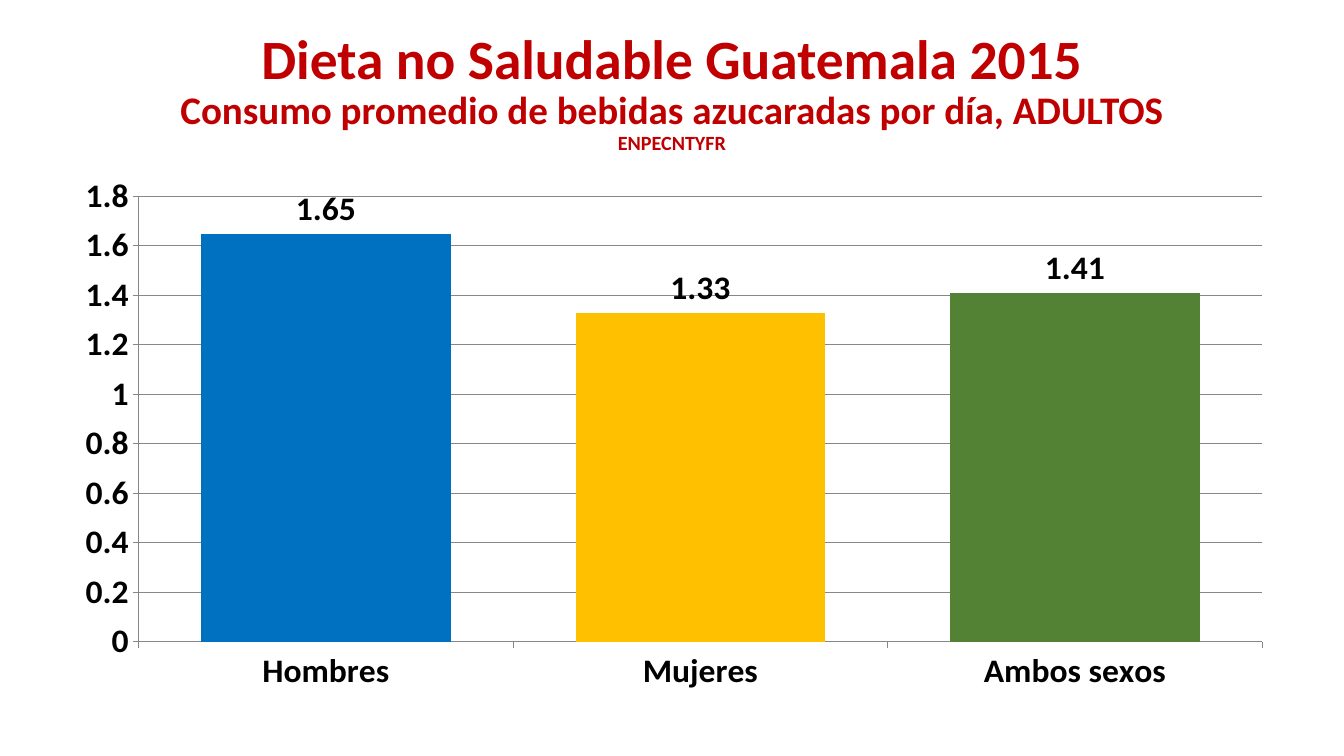
"""Build a slide charting average daily sugary drinks among Guatemalan adults."""
from lxml.etree import SubElement
from pptx import Presentation
from pptx.chart.data import CategoryChartData
from pptx.dml.color import RGBColor
from pptx.enum.chart import XL_CHART_TYPE, XL_LABEL_POSITION, XL_TICK_MARK
from pptx.enum.text import MSO_ANCHOR, MSO_AUTO_SIZE, PP_ALIGN
from pptx.oxml.ns import qn
from pptx.util import Pt

COLORS = {
    "title": "C00000",
    "text": "000000",
    "axis": "878787",
    "series": "4472C4",
    "men": "0070C0",
    "women": "FFC000",
    "both": "548235",
}
FONT = "Calibri"
SLIDE_SIZE = (960, 540)
TITLE_BOX = (66, 28.8, 828, 104.4)
CHART_BOX = (48, 126, 864, 368)
PLOT_AREA = {"x": 0.059, "y": 0.031, "w": 0.929, "h": 0.888}
TITLE_LINES = [
    ("Dieta no Saludable Guatemala 2015", 39.6),
    ("Consumo promedio de bebidas azucaradas por día, ADULTOS", 27.9),
    ("ENPECNTYFR", 14.4),
]
BARS = [("Hombres", 1.65, "men"), ("Mujeres", 1.33, "women"), ("Ambos sexos", 1.41, "both")]
TITLE_FRAME = {
    "auto_size": MSO_AUTO_SIZE.NONE,
    "word_wrap": True,
    "vertical_anchor": MSO_ANCHOR.MIDDLE,
    "margin_top": Pt(3.6),
    "margin_bottom": Pt(32.6),
}
CHART_FONT = {"name": FONT, "size": Pt(24), "bold": True}
VALUE_SCALE = {"minimum_scale": 0, "maximum_scale": 1.8, "major_unit": 0.2}
LABELS = {"show_value": True, "position": XL_LABEL_POSITION.OUTSIDE_END}


def apply(target, values):
    for name, value in values.items():
        setattr(target, name, value)


def color(name):
    return RGBColor.from_string(COLORS[name])


def format_font(font, values, color_name):
    apply(font, values)
    font.color.rgb = color(color_name)


def format_line(line):
    line.color.rgb = color("axis")
    line.width = Pt(0.75)


def fill_solid(fill, color_name):
    fill.solid()
    fill.fore_color.rgb = color(color_name)


def write_title(slide):
    title = slide.shapes.title
    apply(title, dict(zip(("left", "top", "width", "height"), map(Pt, TITLE_BOX))))
    apply(title.text_frame, TITLE_FRAME)
    paragraph = title.text_frame.paragraphs[0]
    apply(paragraph, {"alignment": PP_ALIGN.CENTER, "line_spacing": 0.9, "space_before": Pt(0)})
    for index, (text, size) in enumerate(TITLE_LINES):
        if index:
            paragraph.add_line_break()
        run = paragraph.add_run()
        run.text = text
        format_font(run.font, {"name": FONT, "size": Pt(size), "bold": True}, "title")


def place_plot(chart):
    plot_area = chart.plots[0]._element.getparent()
    layout = plot_area.find(qn("c:layout"))
    if layout is None:
        layout = SubElement(plot_area, qn("c:layout"))
        plot_area.insert(0, layout)
    manual = SubElement(layout, qn("c:manualLayout"))
    settings = {"layoutTarget": "inner", "xMode": "edge", "yMode": "edge", **PLOT_AREA}
    for name, value in settings.items():
        SubElement(manual, qn(f"c:{name}")).set("val", str(value))


def draw_chart(slide):
    data = CategoryChartData()
    data.categories = [name for name, _, _ in BARS]
    data.add_series("Series 1", [value for _, value, _ in BARS])
    chart = slide.shapes.add_chart(
        XL_CHART_TYPE.COLUMN_CLUSTERED, *map(Pt, CHART_BOX), data
    ).chart
    apply(chart, {"has_legend": False, "has_title": False})
    format_font(chart.font, CHART_FONT, "text")
    place_plot(chart)

    plot = chart.plots[0]
    apply(plot, {"gap_width": 50, "overlap": 59, "vary_by_categories": False, "has_data_labels": True})
    apply(plot.data_labels, LABELS)
    format_font(plot.data_labels.font, CHART_FONT, "text")
    series = plot.series[0]
    fill_solid(series.format.fill, "series")
    for index, (_, _, color_name) in enumerate(BARS):
        fill_solid(series.points[index].format.fill, color_name)

    for axis in (chart.category_axis, chart.value_axis):
        axis.major_tick_mark = XL_TICK_MARK.OUTSIDE
        format_font(axis.tick_labels.font, CHART_FONT, "text")
        format_line(axis.format.line)
    apply(chart.value_axis, VALUE_SCALE)
    format_line(chart.value_axis.major_gridlines.format.line)


def main():
    presentation = Presentation()
    presentation.slide_width, presentation.slide_height = map(Pt, SLIDE_SIZE)
    slide = presentation.slides.add_slide(presentation.slide_layouts[5])
    write_title(slide)
    draw_chart(slide)
    presentation.save("out.pptx")


if __name__ == "__main__":
    main()
